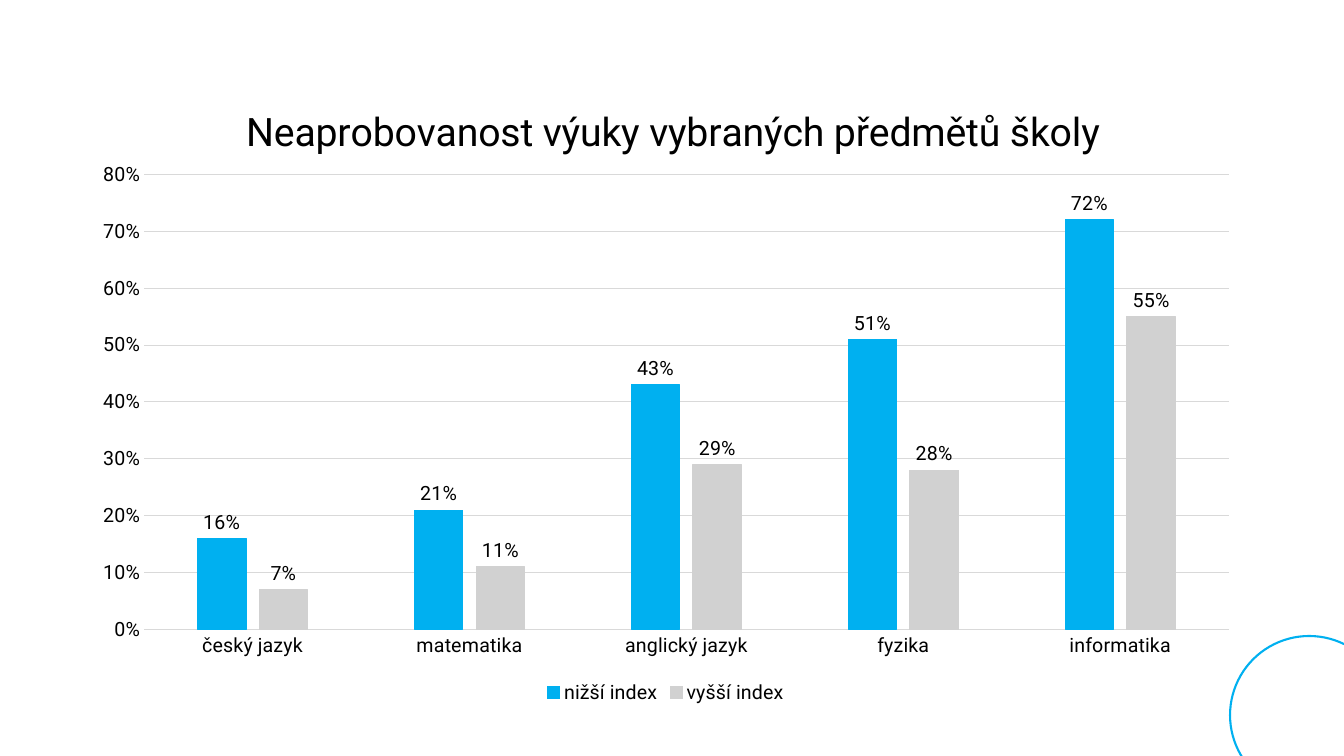
"""Build a slide with a column chart of unqualified teaching by subject."""
import pptx
import pptx.chart.data
import pptx.dml.color
import pptx.enum.chart
import pptx.enum.shapes
import pptx.oxml
import pptx.oxml.ns
import pptx.util
from pptx.util import Inches

FONT = "Roboto"
COLORS = {"blue": "00B0F0", "gray": "D1D1D1", "grid": "D9D9D9", "text": "000000"}
SUBJECTS = ["český jazyk", "matematika", "anglický jazyk", "fyzika", "informatika"]
SERIES = [
    ("nižší index", [0.16, 0.21, 0.43, 0.51, 0.72], "blue"),
    ("vyšší index", [0.07, 0.11, 0.29, 0.28, 0.55], "gray"),
]


def rgb(name):
    return pptx.dml.color.RGBColor.from_string(COLORS[name])


def style_font(font, size):
    font.name = FONT
    font.size = pptx.util.Pt(size)
    font.bold = False
    font.color.rgb = rgb("text")


def style_line(line, color, width=0.75):
    line.color.rgb = rgb(color)
    line.width = pptx.util.Pt(width)


def set_layout(parent, index, **values):
    qn = pptx.oxml.ns.qn
    for old in parent.findall(qn("c:layout")):
        parent.remove(old)
    items = "".join(f'<c:{tag} val="{val}"/>' for tag, val in values.items())
    layout = pptx.oxml.parse_xml(
        f'<c:layout {pptx.oxml.ns.nsdecls("c")}>'
        f"<c:manualLayout>{items}</c:manualLayout></c:layout>"
    )
    parent.insert(index, layout)


def style_title(chart, text):
    tf = chart.chart_title.text_frame
    tf.text = text
    style_font(tf.paragraphs[0].runs[0].font, 28)
    chart.chart_title.include_in_layout = False
    set_layout(chart.chart_title._element, 1, xMode="edge", yMode="edge", x=0.136, y=0.035)


def style_axes(chart):
    for axis in (chart.category_axis, chart.value_axis):
        axis.major_tick_mark = pptx.enum.chart.XL_TICK_MARK.NONE
        axis.minor_tick_mark = pptx.enum.chart.XL_TICK_MARK.NONE
        style_font(axis.tick_labels.font, 14)
    style_line(chart.category_axis.format.line, "grid")
    values = chart.value_axis
    values.minimum_scale, values.maximum_scale, values.major_unit = 0, 0.8, 0.1
    values.tick_labels.number_format = "0%"
    values.tick_labels.number_format_is_linked = False
    values.format.line.fill.background()
    style_line(values.major_gridlines.format.line, "grid")


def style_series(series, color):
    series.format.fill.solid()
    series.format.fill.fore_color.rgb = rgb(color)
    style_line(series.format.line, color)
    labels = series.data_labels
    labels.show_value = True
    labels.position = pptx.enum.chart.XL_LABEL_POSITION.OUTSIDE_END
    labels.number_format = "0%"
    labels.number_format_is_linked = False
    style_font(labels.font, 14)


def add_column_chart(s):
    data = pptx.chart.data.CategoryChartData(number_format="0%")
    data.categories = SUBJECTS
    for name, values, _ in SERIES:
        data.add_series(name, values)
    chart = s.shapes.add_chart(
        pptx.enum.chart.XL_CHART_TYPE.COLUMN_CLUSTERED,
        Inches(0.79), Inches(0.76), Inches(11.63), Inches(6.27), data,
    ).chart
    style_font(chart.font, 10)
    style_title(chart, "Neaprobovanost výuky vybraných předmětů školy")
    style_axes(chart)
    plot = chart.plots[0]
    plot.gap_width, plot.overlap, plot.vary_by_categories = 219, -27, False
    for series, (_, _, color) in zip(plot.series, SERIES):
        style_series(series, color)
    chart.has_legend = True
    chart.legend.position = pptx.enum.chart.XL_LEGEND_POSITION.BOTTOM
    chart.legend.include_in_layout = False
    style_font(chart.legend.font, 14)
    set_layout(
        chart._chartSpace.chart.plotArea, 0, layoutTarget="inner",
        xMode="edge", yMode="edge", x=0.055, y=0.155, w=0.925, h=0.72,
    )


def add_ring(s, left, top, size):
    sp = s.shapes.add_shape(
        pptx.enum.shapes.MSO_SHAPE.OVAL,
        Inches(left), Inches(top), Inches(size), Inches(size),
    )
    sp.shadow.inherit = False
    sp.fill.background()
    style_line(sp.line, "blue", 1.5)


def main():
    prs = pptx.Presentation()
    prs.slide_width, prs.slide_height = Inches(13.33), Inches(7.5)
    s = prs.slides.add_slide(prs.slide_layouts[6])
    add_column_chart(s)
    add_ring(s, 12.2, 6.31, 1.57)
    prs.save("out.pptx")


if __name__ == "__main__":
    main()
